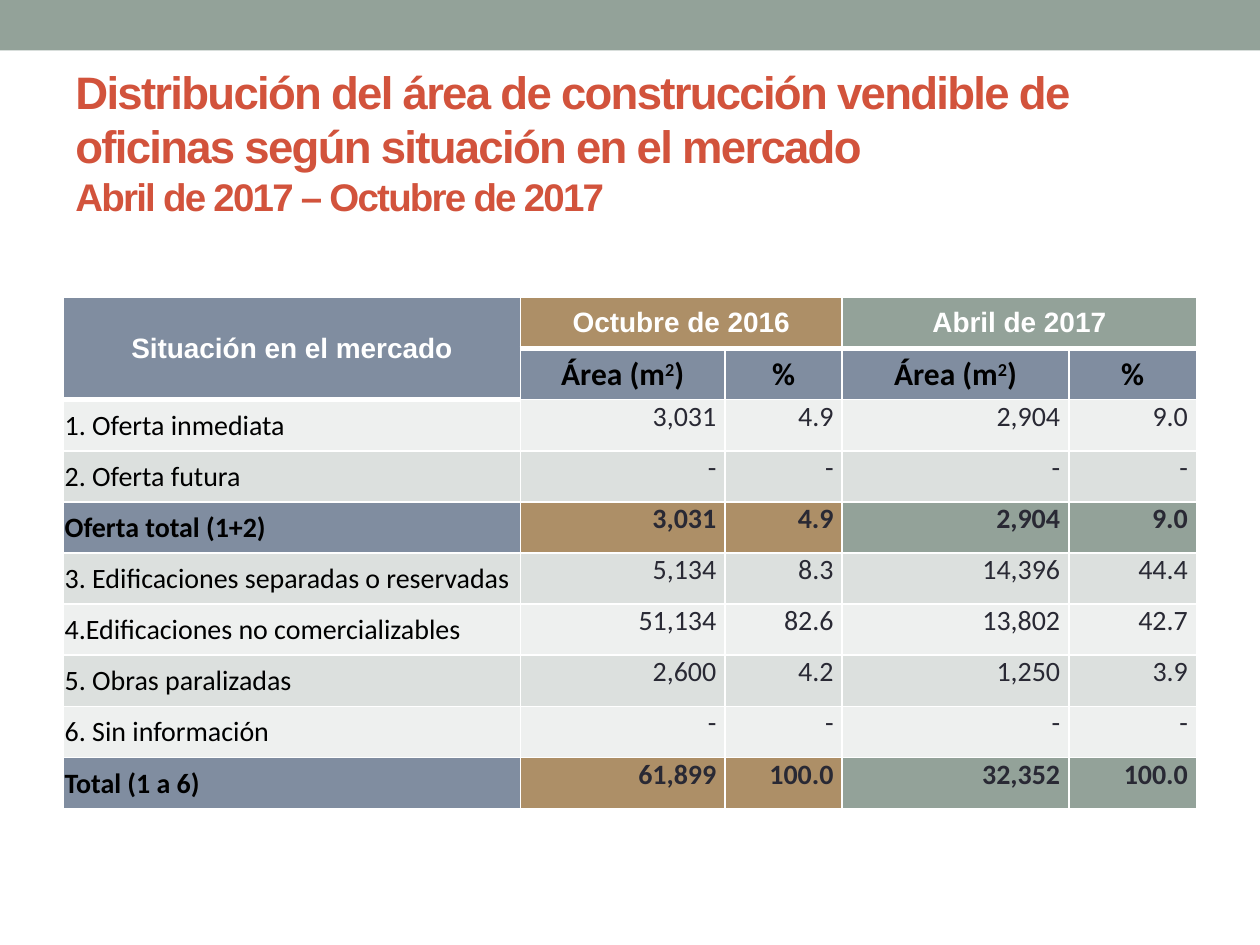
from lxml.etree import SubElement
from pptx import Presentation
from pptx.dml.color import RGBColor
from pptx.enum.shapes import MSO_SHAPE
from pptx.enum.text import MSO_ANCHOR, PP_ALIGN
from pptx.oxml.ns import qn
from pptx.util import Pt

SLATE, TAN, SAGE = "808DA0", "AD8F67", "93A299"
WHITE, BLACK, DARK, RED = "FFFFFF", "000000", "292934", "D2533C"
BANDS = ("EEF0EF", "DCE0DE")
COLUMN_WIDTHS = (261, 117, 67, 129.5, 73)
ROW_HEIGHT = 29.2
SUBHEADS = ("Área (m2)", "%", "Área (m2)", "%")
MARKET_ROWS = (
    ("1. Oferta inmediata", "3,031", "4.9", "2,904", "9.0"),
    ("2. Oferta futura", "-", "-", "-", "-"),
    ("Oferta total (1+2)", "3,031", "4.9", "2,904", "9.0"),
    ("3. Edificaciones separadas o reservadas", "5,134", "8.3", "14,396", "44.4"),
    ("4.Edificaciones no comercializables", "51,134", "82.6", "13,802", "42.7"),
    ("5. Obras paralizadas", "2,600", "4.2", "1,250", "3.9"),
    ("6. Sin información ", "-", "-", "-", "-"),
    ("Total (1 a 6)", "61,899", "100.0", "32,352", "100.0"),
)


def rgb(color):
    return RGBColor.from_string(color)


def format_run(r, size, color, bold, name):
    r.font.size = Pt(size)
    r.font.color.rgb = rgb(color)
    r.font.bold = bold
    r.font.name = name


def add_top_band(s):
    sp = s.shapes.add_shape(MSO_SHAPE.RECTANGLE, 0, 0, Pt(720), Pt(28.8))
    sp.shadow.inherit = False
    sp.fill.solid()
    sp.fill.fore_color.rgb = rgb(SAGE)
    sp.line.fill.background()


def add_title(s):
    tf = s.shapes.add_textbox(Pt(36), Pt(41.8), Pt(648), Pt(77.8)).text_frame
    tf.word_wrap = True
    tf.vertical_anchor = MSO_ANCHOR.MIDDLE
    p = tf.paragraphs[0]
    p.text = ("Distribución del área de construcción vendible de oficinas "
              "según situación en el mercado \vAbril de 2017 – Octubre de 2017")
    for r, size in zip(p.runs, (26, 22)):
        format_run(r, size, RED, True, "Arial")
        r.font._element.set("spc", "-100")


def set_borders(cell, top=1, bottom=1):
    tcPr = cell._tc.get_or_add_tcPr()
    widths = {"a:lnL": 1, "a:lnR": 1, "a:lnT": top, "a:lnB": bottom}
    for i, (tag, width) in enumerate(widths.items()):
        ln = SubElement(tcPr, qn(tag), w=str(Pt(width)))
        SubElement(SubElement(ln, qn("a:solidFill")), qn("a:srgbClr"), val=WHITE)
        tcPr.insert(i, ln)


def set_cell(cell, text, fill, align, size=16, color=BLACK, bold=False, name="Calibri"):
    cell.fill.solid()
    cell.fill.fore_color.rgb = rgb(fill)
    p = cell.text_frame.paragraphs[0]
    p.text = text
    p.alignment = align
    for r in p.runs:
        format_run(r, size, color, bold, name)


def set_insets(cell, side, top):
    cell.margin_left = cell.margin_right = Pt(side)
    cell.margin_top, cell.margin_bottom = Pt(top), 0


def raise_square(p):
    """Splits 'm2' so that its 2 becomes a superscript."""
    before, after = p.text.split("2")
    first = p.runs[0]
    first.text = before
    for text in ("2", after):
        r = p.add_run()
        r.text = text
        format_run(r, 18, BLACK, True, "Calibri")
    p.runs[1].font._element.set("baseline", "30000")


def fill_header(table):
    heads = ((0, "Situación en el mercado", SLATE, (1, 0)),
             (1, "Octubre de 2016", TAN, (0, 2)),
             (3, "Abril de 2017", SAGE, (0, 4)))
    for col, text, fill, end in heads:
        cell = table.cell(0, col)
        cell.merge(table.cell(*end))
        set_cell(cell, text, fill, PP_ALIGN.CENTER, 16, WHITE, True, "Arial")
        cell.vertical_anchor = MSO_ANCHOR.MIDDLE
    for col, text in enumerate(SUBHEADS, 1):
        cell = table.cell(1, col)
        set_cell(cell, text, SLATE, PP_ALIGN.CENTER, 18, bold=True)
        cell.vertical_anchor = MSO_ANCHOR.MIDDLE
        set_insets(cell, 0.7, 0.7)
        if "2" in text:
            raise_square(cell.text_frame.paragraphs[0])


def fill_body(table):
    for i, (label, *values) in enumerate(MARKET_ROWS):
        total = "otal (" in label
        fills = (SLATE, TAN, TAN, SAGE, SAGE) if total else (BANDS[i % 2],) * 5
        cell = table.cell(i + 2, 0)
        set_cell(cell, label, fills[0], PP_ALIGN.JUSTIFY, bold=total)
        cell.vertical_anchor = MSO_ANCHOR.MIDDLE
        set_insets(cell, 0.7, 0.7)
        for col, value in enumerate(values, 1):
            cell = table.cell(i + 2, col)
            set_cell(cell, value, fills[col], PP_ALIGN.RIGHT, color=DARK, bold=total)
            set_insets(cell, 5, 0)


def add_market_table(s):
    rows = len(MARKET_ROWS) + 2
    table = s.shapes.add_table(rows, len(COLUMN_WIDTHS), Pt(36.3), Pt(170),
                               Pt(sum(COLUMN_WIDTHS)), Pt(rows * ROW_HEIGHT)).table
    for column, width in zip(table.columns, COLUMN_WIDTHS):
        column.width = Pt(width)
    for row in table.rows:
        row.height = Pt(ROW_HEIGHT)
    fill_header(table)
    fill_body(table)
    for i in range(rows):
        for j in range(len(COLUMN_WIDTHS)):
            last_head = 1 if j == 0 else 0
            set_borders(table.cell(i, j), top=3 if i == last_head + 1 else 1,
                        bottom=3 if i in (0, last_head) else 1)


def main():
    prs = Presentation()
    prs.slide_width, prs.slide_height = Pt(720), Pt(540)
    s = prs.slides.add_slide(prs.slide_layouts[6])
    add_top_band(s)
    add_title(s)
    add_market_table(s)
    prs.save("out.pptx")


if __name__ == "__main__":
    main()
